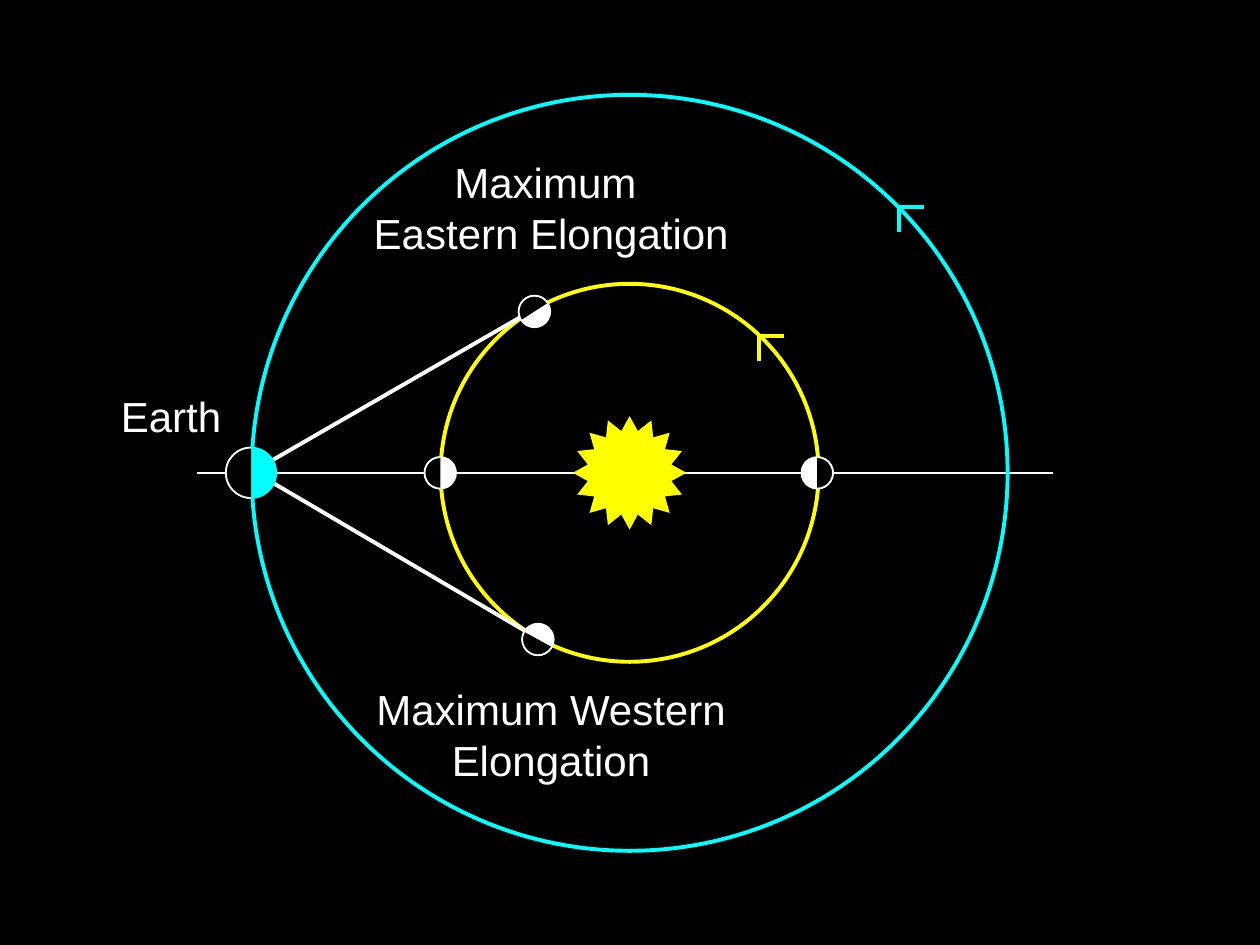
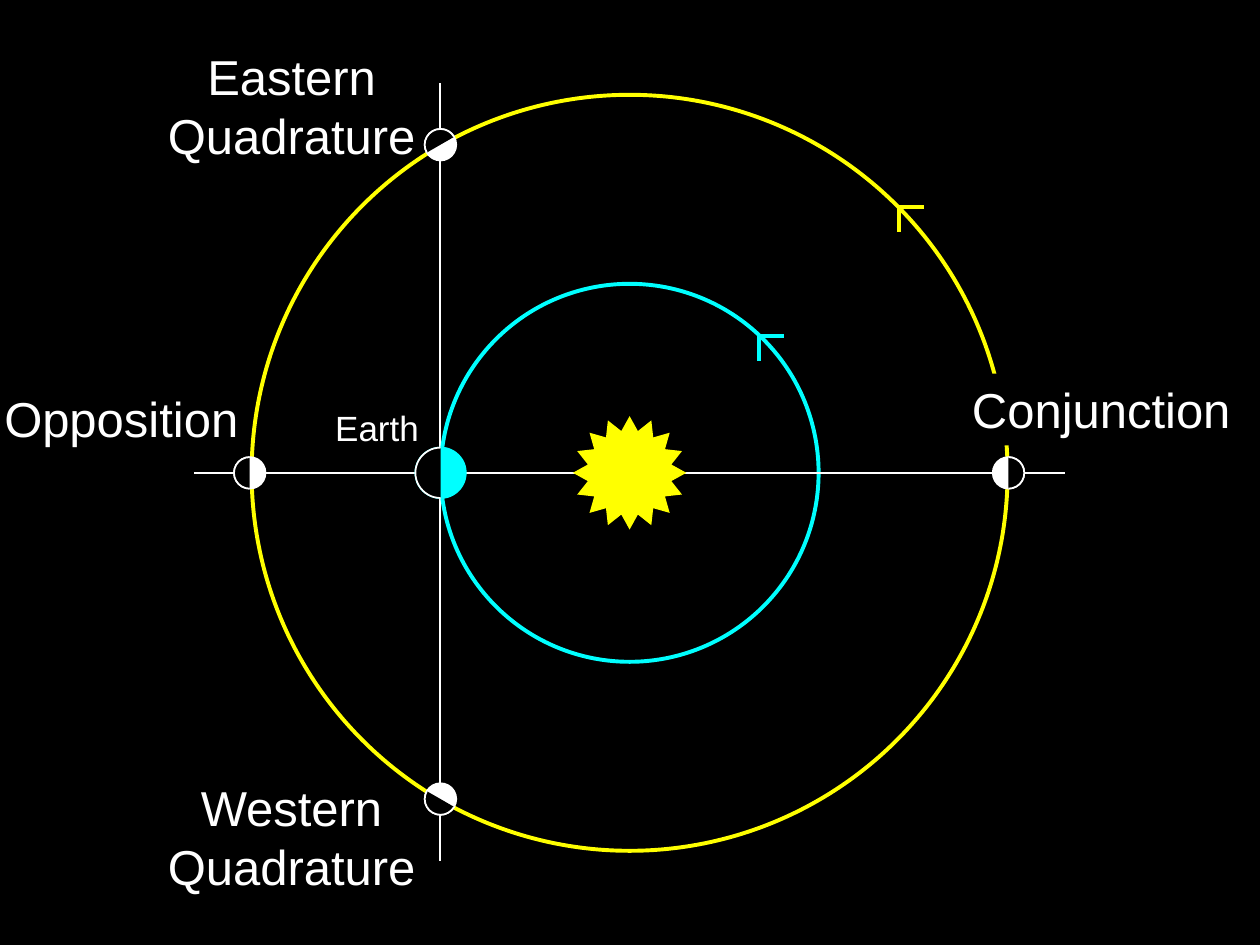
from dataclasses import dataclass

from lxml import etree
from pptx import Presentation
from pptx.dml.color import RGBColor
from pptx.enum.shapes import MSO_CONNECTOR, MSO_SHAPE
from pptx.enum.text import PP_ALIGN
from pptx.oxml.ns import qn
from pptx.util import Pt

ELLIPSE, ARC, STAR = MSO_SHAPE.OVAL, MSO_SHAPE.ARC, MSO_SHAPE.STAR_16_POINT
STRAIGHT = MSO_CONNECTOR.STRAIGHT
CENTER, RIGHT = PP_ALIGN.CENTER, PP_ALIGN.RIGHT


@dataclass(frozen=True)
class Theme:
    space: RGBColor = RGBColor(0, 0, 0)
    white: RGBColor = RGBColor(255, 255, 255)
    earth: RGBColor = RGBColor(0, 255, 255)
    sun: RGBColor = RGBColor(255, 255, 0)
    font: str = "Arial"
    small: int = 20
    medium: int = 24
    large: int = 28
    thin: float = 1
    thick: float = 2.25


THEME = Theme()
SUN_X, SUN_Y, SUN_RADIUS = 359.8, 270.2, 31.4
INNER, OUTER = 108, 216
ARROW_TIPS = {INNER: (433.6, 192.1), OUTER: (513.8, 118.5)}
ARROW_SIZE = 14.2
EARTH_RADIUS, PLANET_RADIUS = 14.4, 9


def paint(shape, fill=None, line=None, width=THEME.thin):
    shape.shadow.inherit = False
    if fill is None:
        shape.fill.background()
    else:
        shape.fill.solid()
        shape.fill.fore_color.rgb = fill
    if line is None:
        shape.line.fill.background()
    else:
        shape.line.color.rgb = line
        shape.line.width = Pt(width)


def sharpen_corners(shape):
    """Give the outline mitred joins."""
    etree.SubElement(shape.line._get_or_add_ln(), qn("a:miter"), lim="800000")


def add_round(s, kind, x, y, radius):
    """Add a preset shape centred on a point."""
    return s.shapes.add_shape(kind, Pt(x - radius), Pt(y - radius), Pt(2 * radius), Pt(2 * radius))


def add_line(s, start, end, width=THEME.thin):
    line = s.shapes.add_connector(STRAIGHT, *map(Pt, start + end))
    line.line.color.rgb = THEME.white
    line.line.width = Pt(width)
    etree.SubElement(line._element.spPr, qn("a:effectLst"))


def add_orbit(s, radius, color):
    """Add a circular orbit with its direction arrow at the upper right."""
    paint(add_round(s, ELLIPSE, SUN_X, SUN_Y, radius), line=color, width=THEME.thick)
    x, y = ARROW_TIPS[radius]
    builder = s.shapes.build_freeform(Pt(x + ARROW_SIZE), Pt(y))
    builder.add_line_segments([(Pt(x), Pt(y)), (Pt(x), Pt(y + ARROW_SIZE))], close=False)
    arrow = builder.convert_to_shape()
    paint(arrow, line=color, width=THEME.thick)
    sharpen_corners(arrow)


def add_sun(s):
    sun = add_round(s, STAR, SUN_X, SUN_Y, SUN_RADIUS)
    sun.adjustments[0] = 0.375
    paint(sun, THEME.sun, THEME.sun)
    sharpen_corners(sun)


def add_planet(s, x, y, tilt=0, radius=PLANET_RADIUS, color=THEME.white):
    """Add a half-lit disc; the dark half faces left, turned clockwise by tilt."""
    paint(add_round(s, ELLIPSE, x, y, radius), color, color)
    night = add_round(s, ARC, x, y, radius)
    for i, angle in enumerate((90 + tilt, 270 + tilt)):
        night.adjustments[i] = angle % 360 * 0.6  # 60000 units per degree
    paint(night, THEME.space, THEME.white)


def add_earth(s, x):
    add_planet(s, x, SUN_Y, radius=EARTH_RADIUS, color=THEME.earth)


def add_label(s, lines, box, size, align=CENTER, fill=None):
    label = s.shapes.add_textbox(*map(Pt, box))
    if fill is not None:
        label.fill.solid()
        label.fill.fore_color.rgb = fill
    tf = label.text_frame
    tf.word_wrap = False
    for i, text in enumerate(lines):
        p = tf.add_paragraph() if i else tf.paragraphs[0]
        p.alignment = align
        r = p.add_run()
        r.text = text
        r.font.name = THEME.font
        r.font.size = Pt(size)
        r.font.color.rgb = THEME.white


def new_slide(prs):
    s = prs.slides.add_slide(prs.slide_layouts[6])
    s.background.fill.solid()
    s.background.fill.fore_color.rgb = THEME.space
    return s


def inner_planet_slide(prs):
    s = new_slide(prs)
    add_line(s, (112.5, SUN_Y), (601.5, SUN_Y))
    add_orbit(s, INNER, THEME.sun)
    add_orbit(s, OUTER, THEME.earth)
    add_sun(s)
    add_planet(s, 251.6, SUN_Y)
    add_planet(s, 467, SUN_Y, tilt=180)

    elongations = [
        (("Maximum ", "Eastern Elongation"), (206.2, 86.1, 217.5, 65), (303, 178), (305.4, 178), 57.2),
        (("Maximum Western", "Elongation"), (207.6, 387.1, 214.5, 65), (305.3, 363.6), (307.4, 365.4), -61.2),
    ]
    for lines, box, sight_end, planet, tilt in elongations:
        add_line(s, (144.7, 269.3), sight_end, THEME.thick)
        add_label(s, lines, box, THEME.medium)
        add_planet(s, *planet, tilt)
    add_earth(s, 143.5)
    add_label(s, ["Earth"], (57.5, 219.5, 76, 36), THEME.medium, RIGHT)


def outer_planet_slide(prs):
    s = new_slide(prs)
    add_line(s, (251.6, 492), (251.6, 47.7))
    add_orbit(s, INNER, THEME.earth)
    add_orbit(s, OUTER, THEME.sun)
    add_label(s, ["Opposition"], (-5, 218.5, 148.5, 41), THEME.large)
    add_label(s, ["Conjunction"], (548, 213.5, 162.5, 41), THEME.large, fill=THEME.space)
    add_line(s, (111, SUN_Y), (608.5, SUN_Y))
    add_sun(s)
    add_planet(s, 142.7, SUN_Y)
    add_planet(s, 576.3, SUN_Y, tilt=180)
    add_earth(s, 251.8)

    for name, top, planet_y, tilt in (("Eastern", 23, 82.7, 60), ("Western", 440.7, 456.6, -60)):
        add_label(s, [name, "Quadrature"], (88.6, top, 156, 74), THEME.large)
        add_planet(s, 251.7, planet_y, tilt)
    add_label(s, ["Earth"], (178.5, 228.5, 68, 31), THEME.small, RIGHT)


def main():
    prs = Presentation()
    prs.slide_width, prs.slide_height = Pt(720), Pt(540)
    inner_planet_slide(prs)
    outer_planet_slide(prs)
    prs.save("out.pptx")


if __name__ == "__main__":
    main()
